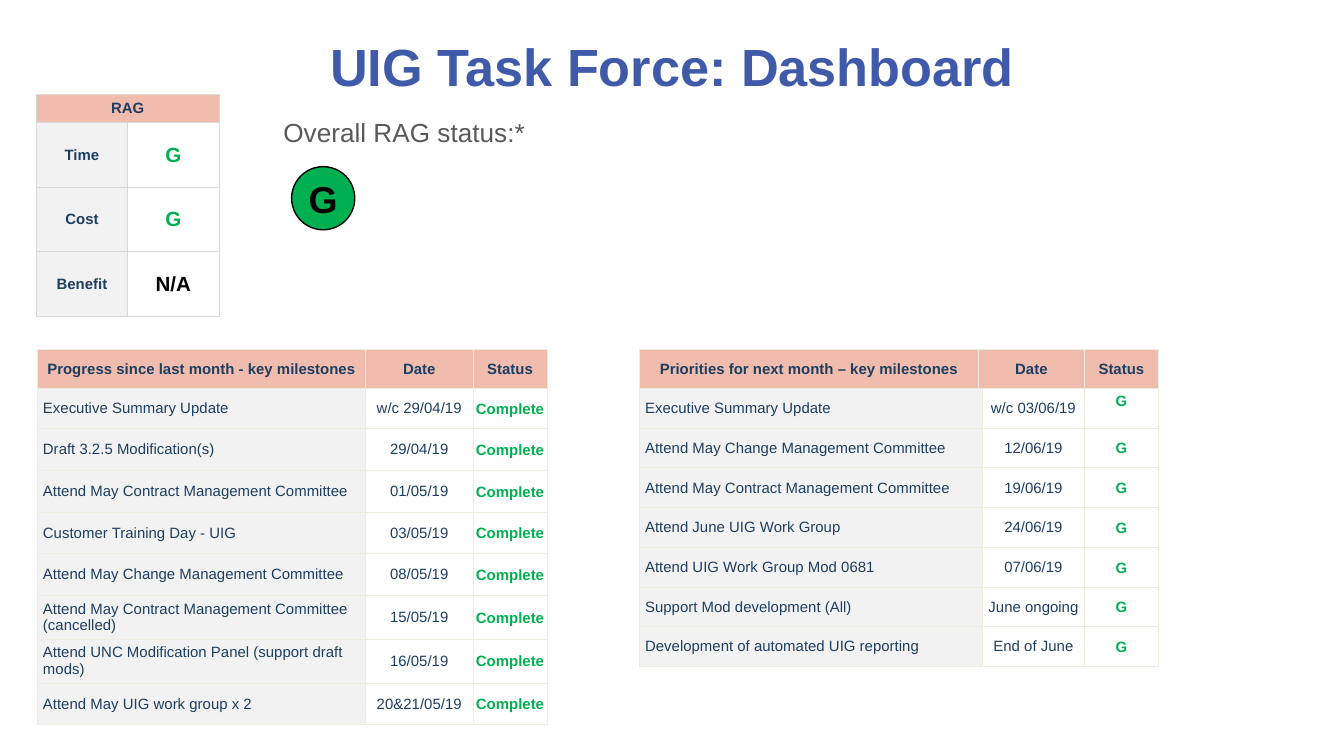
from lxml.etree import SubElement
from pptx import Presentation
from pptx.dml.color import RGBColor
from pptx.enum.shapes import MSO_SHAPE
from pptx.enum.text import MSO_ANCHOR, PP_ALIGN
from pptx.oxml.ns import qn
from pptx.util import Inches, Pt

NAVY = RGBColor(0x1D, 0x3E, 0x61)
BLUE = RGBColor(0x3E, 0x5A, 0xA8)
GREEN = RGBColor(0x00, 0xB0, 0x50)
SALMON = RGBColor(0xEF, 0xBC, 0xAD)
PALE = RGBColor(0xF2, 0xF2, 0xF2)
WHITE = RGBColor(0xFF, 0xFF, 0xFF)
BLACK = RGBColor(0x00, 0x00, 0x00)
GREY = RGBColor(0x59, 0x59, 0x59)
GREY_BORDER = RGBColor(0xD9, 0xD9, 0xD9)
CREAM_BORDER = RGBColor(0xEE, 0xEC, 0xE1)

# Content
TITLE = "UIG Task Force: Dashboard"
OVERALL_LABEL, OVERALL_STATUS = "Overall RAG status:*", "G"
RAG = [("Time", "G", GREEN), ("Cost", "G", GREEN), ("Benefit", "N/A", BLACK)]
PROGRESS_HEADER = ("Progress since last month - key milestones", "Date", "Status")
PROGRESS = [
    ("Executive Summary Update", "w/c 29/04/19"),
    ("Draft 3.2.5 Modification(s)", "29/04/19"),
    ("Attend May Contract Management Committee", "01/05/19"),
    ("Customer Training Day - UIG", "03/05/19"),
    ("Attend May Change Management Committee", "08/05/19"),
    ("Attend May Contract Management Committee (cancelled)", "15/05/19"),
    ("Attend UNC Modification Panel (support draft mods)", "16/05/19"),
    ("Attend May UIG work group x 2", "20&21/05/19"),
]
PRIORITIES_HEADER = ("Priorities for next month – key milestones", "Date", "Status")
PRIORITIES = [
    ("Executive Summary Update", "w/c 03/06/19"),
    ("Attend May Change Management Committee", "12/06/19"),
    ("Attend May Contract Management Committee", "19/06/19"),
    ("Attend June UIG Work Group", "24/06/19"),
    ("Attend UIG Work Group Mod 0681", "07/06/19"),
    ("Support Mod development (All)", "June ongoing"),
    ("Development of automated UIG reporting", "End of June"),
]

# Grid
MILESTONES_TOP, HEADER_HEIGHT = 2.6, 0.29
PROGRESS_LEFT, PRIORITIES_LEFT = 0.28, 4.76
ROOMY = (0.04, 0.03, 0.04, 0.03)
TIGHT = (0.01, 0.01, 0.01, 0)

prs = Presentation()
prs.slide_width = Inches(10)
prs.slide_height = prs.slide_width * 9 // 16
slide = prs.slides.add_slide(prs.slide_layouts[6])


def write(frame, text, size, color, bold=False, align=PP_ALIGN.CENTER):
    paragraph = frame.paragraphs[0]
    paragraph.alignment = align
    run = paragraph.add_run()
    run.text = text
    run.font.name, run.font.size = "Arial", Pt(size)
    run.font.bold, run.font.color.rgb = bold, color


def add_grid(left, top, widths, heights, border):
    table = slide.shapes.add_table(
        len(heights), len(widths), Inches(left), Inches(top),
        Inches(sum(widths)), Inches(sum(heights))).table
    table.first_row = table.horz_banding = False
    for column, width in zip(table.columns, widths):
        column.width = Inches(width)
    for row, height in zip(table.rows, heights):
        row.height = Inches(height)
    for cell in table.iter_cells():
        properties = cell._tc.get_or_add_tcPr()
        for side in ("a:lnL", "a:lnR", "a:lnT", "a:lnB"):
            line = SubElement(properties, qn(side), w=str(Pt(0.5)))
            fill = SubElement(line, qn("a:solidFill"))
            SubElement(fill, qn("a:srgbClr"), val=str(border))
    return table


def fill_cell(cell, text, fill, color=NAVY, size=8, bold=False,
              align=PP_ALIGN.CENTER, margins=ROOMY):
    cell.fill.solid()
    cell.fill.fore_color.rgb = fill
    cell.vertical_anchor = MSO_ANCHOR.MIDDLE
    (cell.margin_left, cell.margin_top,
     cell.margin_right, cell.margin_bottom) = map(Inches, margins)
    write(cell.text_frame, text, size, color, bold, align)


def fill_header(table, header):
    for column, label in enumerate(header):
        fill_cell(table.cell(0, column), label, SALMON, bold=True, margins=TIGHT)


def fill_milestones(table, milestones, status, first_row):
    for row, (milestone, date) in enumerate(milestones, first_row):
        fill_cell(table.cell(row, 0), milestone, PALE, align=PP_ALIGN.LEFT)
        fill_cell(table.cell(row, 1), date, WHITE)
        fill_cell(table.cell(row, 2), status, WHITE, GREEN, bold=True, margins=TIGHT)


# Title
title = slide.shapes.add_textbox(Inches(0.5), Inches(0.14), Inches(9), Inches(0.7)).text_frame
title.word_wrap = True
title.vertical_anchor = MSO_ANCHOR.MIDDLE
write(title, TITLE, 28, BLUE, bold=True)

# Overall status
overall = slide.shapes.add_textbox(
    Inches(2.01), Inches(0.82), Inches(2.52), Inches(0.34)).text_frame
overall.word_wrap = True
write(overall, OVERALL_LABEL, 14, GREY, align=PP_ALIGN.LEFT)

light = slide.shapes.add_shape(
    MSO_SHAPE.OVAL, Inches(2.17), Inches(1.24), Inches(0.47), Inches(0.47))
light.shadow.inherit = False
light.fill.solid()
light.fill.fore_color.rgb = GREEN
light.line.color.rgb, light.line.width = BLACK, Pt(0.75)
light_text = light.text_frame
light_text.word_wrap = False
light_text.vertical_anchor = MSO_ANCHOR.MIDDLE
light_text.margin_top = light_text.margin_bottom = 0
light_text.margin_left = light_text.margin_right = Inches(0.25)
write(light_text, OVERALL_STATUS, 20, BLACK, bold=True)

# RAG table
rag = add_grid(0.27, 0.7, [0.68] * 2, [0.2] + [0.48] * len(RAG), GREY_BORDER)
rag.cell(0, 0).merge(rag.cell(0, 1))
fill_cell(rag.cell(0, 0), "RAG", SALMON, bold=True, margins=(0.04,) * 4)
for row, (measure, rating, color) in enumerate(RAG, 1):
    fill_cell(rag.cell(row, 0), measure, PALE, bold=True)
    fill_cell(rag.cell(row, 1), rating, WHITE, color, size=11, bold=True)

# Progress since last month
progress = add_grid(PROGRESS_LEFT, MILESTONES_TOP, [2.44, 0.8, 0.55],
                    [HEADER_HEIGHT, 0.3] + [0.31] * (len(PROGRESS) - 1), CREAM_BORDER)
fill_header(progress, PROGRESS_HEADER)
fill_milestones(progress, PROGRESS, "Complete", 1)

# Priorities for next month: header and body have different column widths
priorities_header = add_grid(PRIORITIES_LEFT, MILESTONES_TOP, [2.52, 0.79, 0.55],
                             [HEADER_HEIGHT], CREAM_BORDER)
fill_header(priorities_header, PRIORITIES_HEADER)
priorities = add_grid(PRIORITIES_LEFT, MILESTONES_TOP + HEADER_HEIGHT, [2.55, 0.76, 0.55],
                      [2.07 / len(PRIORITIES)] * len(PRIORITIES), CREAM_BORDER)
fill_milestones(priorities, PRIORITIES, "G", 0)
priorities.cell(0, 2).margin_bottom = Inches(0.11)  # first status sits higher

prs.save("out.pptx")
